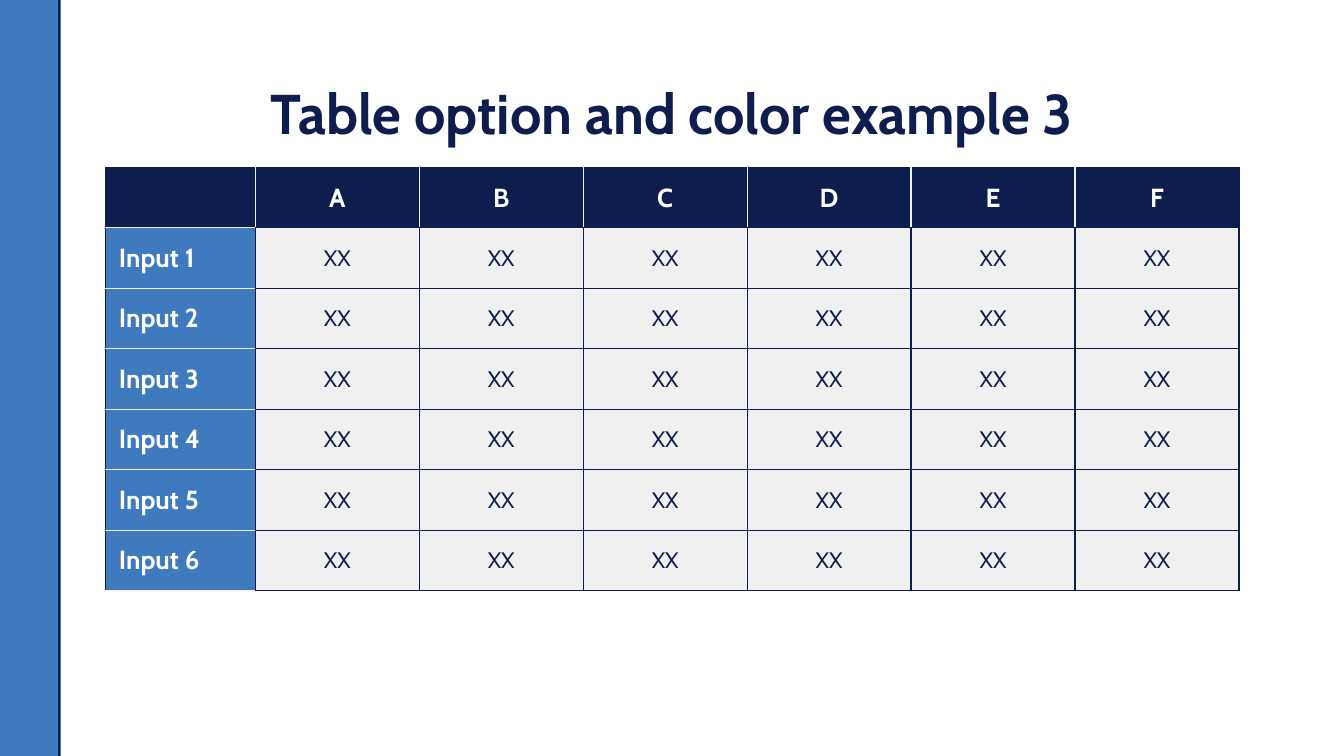
import dataclasses
import typing

import lxml.etree
import pptx
import pptx.dml.color
import pptx.enum.shapes
import pptx.enum.text
import pptx.oxml.ns
import pptx.util

EMU_PER_PX = 4572  # 200 px to the inch
SLIDE_WIDTH, SLIDE_HEIGHT = 2000, 1125
FONT = "Cabin"
NAVY, BLUE, SIDEBAR_BLUE = "0F1C4E", "3F7ABF", "3F7AC0"
PALE, WHITE = "F0F0F0", "FFFFFF"

LEFT = pptx.enum.text.PP_ALIGN.LEFT
CENTER = pptx.enum.text.PP_ALIGN.CENTER

CONTENT_LEFT = 157
COLUMN_LABELS = "ABCDEF"
ROW_COUNT = 6
LABEL_WIDTH, VALUE_WIDTH = 223, 244
HEADER_HEIGHT, ROW_HEIGHT = 89, 90
BLEED = 2


@dataclasses.dataclass(frozen=True)
class TextStyle:
    size: int
    color: str
    bold: bool
    alignment: pptx.enum.text.PP_ALIGN = CENTER


@dataclasses.dataclass(frozen=True)
class CellStyle:
    fill: str
    text: TextStyle
    margin_x: int = 0
    margin_y: int = 0


@dataclasses.dataclass(frozen=True)
class VerticalLine:
    x: int
    color: str
    width: float


TITLE = TextStyle(30, NAVY, True)
HEADER = CellStyle(NAVY, TextStyle(14, WHITE, True), 20, 14)
ROW_LABEL = CellStyle(BLUE, TextStyle(14, WHITE, True, LEFT), 20)
VALUE = CellStyle(PALE, TextStyle(12, NAVY, False))
SIDEBAR_LINES = [VerticalLine(90, BLUE, 0.75), VerticalLine(88, NAVY, 1)]


def px(length: int) -> pptx.util.Emu:
    return pptx.util.Emu(length * EMU_PER_PX)


def rgb(color: str) -> pptx.dml.color.RGBColor:
    return pptx.dml.color.RGBColor.from_string(color)


def set_attributes(target: typing.Any, values: dict[str, typing.Any]) -> None:
    for name, value in values.items():
        setattr(target, name, value)


def write_text(text_frame: typing.Any, text: str, style: TextStyle) -> None:
    paragraph = text_frame.paragraphs[0]
    paragraph.alignment = style.alignment
    run = paragraph.add_run()
    run.text = text
    set_attributes(run.font, {
        "name": FONT,
        "size": pptx.util.Pt(style.size),
        "bold": style.bold,
    })
    run.font.color.rgb = rgb(style.color)


def draw_sidebar(slide: typing.Any) -> None:
    bar = slide.shapes.add_shape(
        pptx.enum.shapes.MSO_SHAPE.RECTANGLE,
        px(-BLEED), px(-BLEED), px(90), px(SLIDE_HEIGHT + 2 * BLEED))
    bar.shadow.inherit = False
    bar.fill.solid()
    bar.fill.fore_color.rgb = rgb(SIDEBAR_BLUE)
    bar.line.fill.background()
    for line in SIDEBAR_LINES:
        connector = slide.shapes.add_connector(
            pptx.enum.shapes.MSO_CONNECTOR.STRAIGHT,
            px(line.x), px(SLIDE_HEIGHT + BLEED), px(line.x), px(-BLEED))
        connector.line.color.rgb = rgb(line.color)
        connector.line.width = pptx.util.Pt(line.width)
        lxml.etree.SubElement(
            connector._element.spPr, pptx.oxml.ns.qn("a:effectLst"))


def draw_title(slide: typing.Any) -> None:
    title = slide.shapes.title
    set_attributes(title, {
        "left": px(CONTENT_LEFT), "top": px(97),
        "width": px(1686), "height": px(126),
    })
    set_attributes(title.text_frame, {
        "margin_left": px(20), "margin_right": px(20),
        "margin_top": px(20), "margin_bottom": px(20),
        "word_wrap": True,
        "auto_size": pptx.enum.text.MSO_AUTO_SIZE.NONE,
        "vertical_anchor": pptx.enum.text.MSO_ANCHOR.TOP,
    })
    write_text(title.text_frame, "Table option and color example 3", TITLE)


def border_colors(row: int, column: int) -> dict[str, str]:
    """Pale lines part cells of the same dark fill; all others are navy."""
    header, label = row == 0, column == 0
    return {
        "L": PALE if header and not label else NAVY,
        "R": PALE if header and column < len(COLUMN_LABELS) else NAVY,
        "T": PALE if label and not header else NAVY,
        "B": PALE if label else NAVY,
    }


def set_borders(cell: typing.Any, colors: dict[str, str]) -> None:
    properties = cell._tc.get_or_add_tcPr()
    qn = pptx.oxml.ns.qn
    for side, color in colors.items():
        border = lxml.etree.SubElement(
            properties, qn(f"a:ln{side}"), w=str(pptx.util.Pt(0.75)))
        fill = lxml.etree.SubElement(border, qn("a:solidFill"))
        lxml.etree.SubElement(fill, qn("a:srgbClr"), val=color)


def format_cell(cell: typing.Any, text: str, style: CellStyle,
                borders: dict[str, str]) -> None:
    set_borders(cell, borders)
    cell.fill.solid()
    cell.fill.fore_color.rgb = rgb(style.fill)
    set_attributes(cell, {
        "margin_left": px(style.margin_x), "margin_right": px(style.margin_x),
        "margin_top": px(style.margin_y), "margin_bottom": px(style.margin_y),
        "vertical_anchor": pptx.enum.text.MSO_ANCHOR.MIDDLE,
    })
    if text:
        write_text(cell.text_frame, text, style.text)


def draw_table(slide: typing.Any) -> None:
    widths = [LABEL_WIDTH] + [VALUE_WIDTH] * len(COLUMN_LABELS)
    heights = [HEADER_HEIGHT] + [ROW_HEIGHT] * ROW_COUNT
    table = slide.shapes.add_table(
        len(heights), len(widths), px(CONTENT_LEFT), px(250),
        px(sum(widths)), px(sum(heights))).table
    set_attributes(table, {"first_row": False, "horz_banding": False})
    for column, width in zip(table.columns, widths):
        column.width = px(width)
    for row, height in zip(table.rows, heights):
        row.height = px(height)

    contents = [["", *COLUMN_LABELS]]
    for number in range(1, ROW_COUNT + 1):
        contents.append([f"Input {number}"] + ["XX"] * len(COLUMN_LABELS))
    for row, texts in enumerate(contents):
        for column, text in enumerate(texts):
            style = HEADER if row == 0 else ROW_LABEL if column == 0 else VALUE
            format_cell(table.cell(row, column), text, style,
                        border_colors(row, column))


def main() -> None:
    presentation = pptx.Presentation()
    set_attributes(presentation, {
        "slide_width": px(SLIDE_WIDTH), "slide_height": px(SLIDE_HEIGHT),
    })
    slide = presentation.slides.add_slide(presentation.slide_layouts[5])
    draw_sidebar(slide)
    draw_title(slide)
    draw_table(slide)
    presentation.save("out.pptx")


if __name__ == "__main__":
    main()
